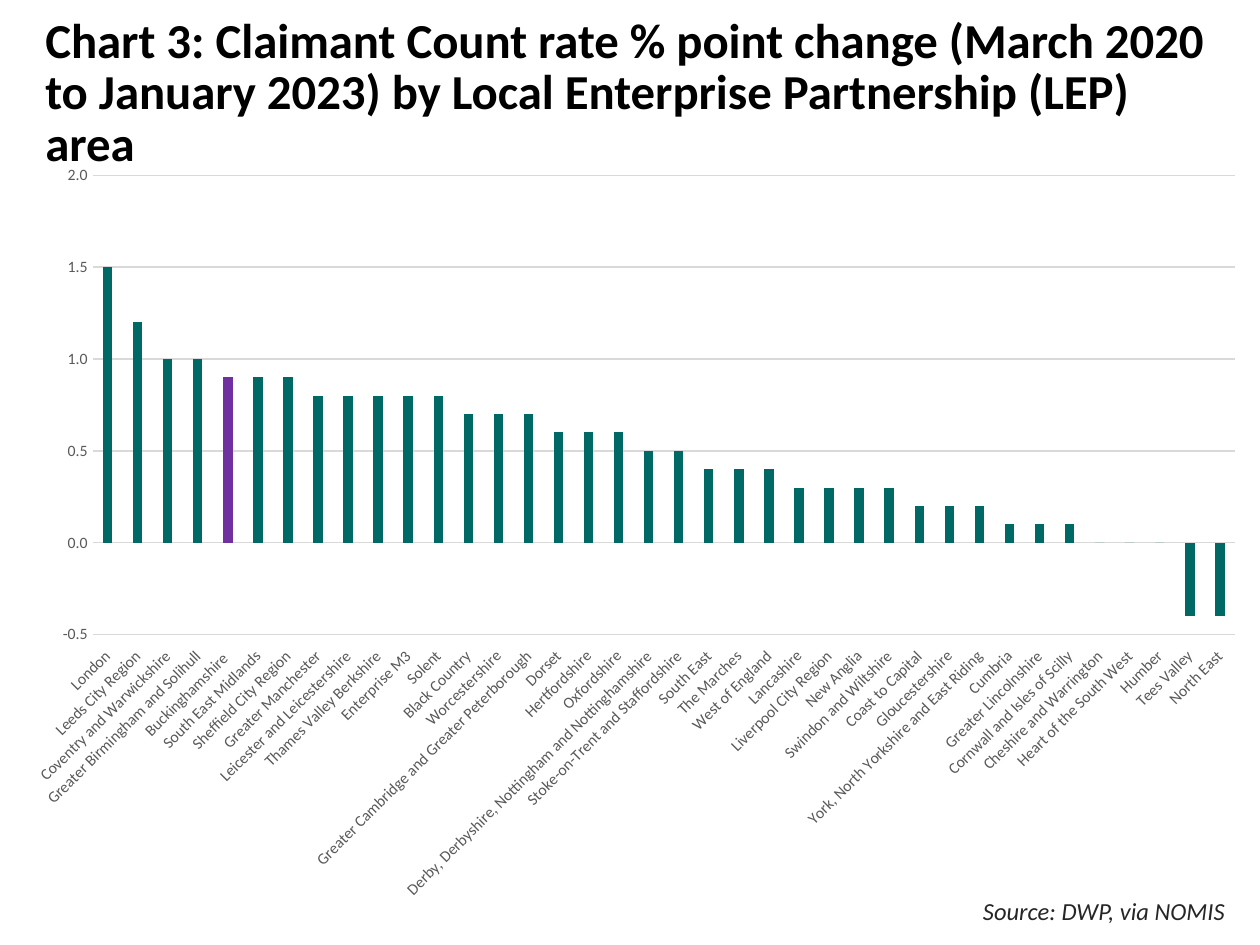
import pptx
import pptx.chart.data
import pptx.dml.color
import pptx.enum.chart
import pptx.enum.text
import pptx.oxml
import pptx.oxml.ns
import pptx.util

Pt = pptx.util.Pt

# Claimant count change in percentage points -> areas, in descending order
AREAS_BY_CHANGE = {
    1.5: ["London"],
    1.2: ["Leeds City Region"],
    1.0: ["Coventry and Warwickshire", "Greater Birmingham and Solihull"],
    0.9: ["Buckinghamshire ", "South East Midlands", "Sheffield City Region"],
    0.8: ["Greater Manchester", "Leicester and Leicestershire",
          "Thames Valley Berkshire", "Enterprise M3", "Solent"],
    0.7: ["Black Country", "Worcestershire",
          "Greater Cambridge and Greater Peterborough"],
    0.6: ["Dorset", "Hertfordshire", "Oxfordshire"],
    0.5: ["Derby, Derbyshire, Nottingham and Nottinghamshire",
          "Stoke-on-Trent and Staffordshire"],
    0.4: ["South East", "The Marches", "West of England"],
    0.3: ["Lancashire", "Liverpool City Region", "New Anglia",
          "Swindon and Wiltshire"],
    0.2: ["Coast to Capital", "Gloucestershire",
          "York, North Yorkshire and East Riding"],
    0.1: ["Cumbria", "Greater Lincolnshire", "Cornwall and Isles of Scilly"],
    0.0: ["Cheshire and Warrington", "Heart of the South West", "Humber"],
    -0.4: ["Tees Valley", "North East"],
}
HIGHLIGHT = "Buckinghamshire "


def rgb(value):
    return pptx.dml.color.RGBColor.from_string(value)


def set_font(font, size, color, bold=False, italic=False):
    font.name = "Calibri"
    font.size = Pt(size)
    font.color.rgb = rgb(color)
    font.bold = bold
    font.italic = italic


def write_text(tf, text, align="LEFT", anchor="TOP", spacing=1.0, **font):
    tf.word_wrap = True
    tf.auto_size = pptx.enum.text.MSO_AUTO_SIZE.NONE
    tf.vertical_anchor = getattr(pptx.enum.text.MSO_ANCHOR, anchor)
    p = tf.paragraphs[0]
    p.alignment = getattr(pptx.enum.text.PP_ALIGN, align)
    p.line_spacing = spacing
    r = p.add_run()
    r.text = text
    set_font(r.font, **font)


def set_plot_layout(chart, **fractions):
    """Fix the inner plot area as fractions (x, y, w, h) of the chart."""
    plot_area = chart.element.find(".//" + pptx.oxml.ns.qn("c:plotArea"))
    old = plot_area.find(pptx.oxml.ns.qn("c:layout"))
    if old is not None:
        plot_area.remove(old)
    sizes = "".join(f'<c:{k} val="{v}"/>' for k, v in fractions.items())
    plot_area.insert(0, pptx.oxml.parse_xml(
        f'<c:layout {pptx.oxml.ns.nsdecls("c")}><c:manualLayout>'
        '<c:layoutTarget val="inner"/><c:xMode val="edge"/>'
        f'<c:yMode val="edge"/>{sizes}</c:manualLayout></c:layout>'))


class SlideBuilder:
    black, dark, grey, rule = "000000", "262626", "595959", "D9D9D9"
    bar, accent = "006965", "7030A0"

    def __init__(self, prs):
        self.s = prs.slides.add_slide(prs.slide_layouts[5])

    def title(self, text, x, y, w, h):
        sp = self.s.shapes.title
        sp.left, sp.top, sp.width, sp.height = map(Pt, (x, y, w, h))
        write_text(sp.text_frame, text, anchor="MIDDLE", spacing=0.88,
                   size=27.9, color=self.black, bold=True)

    def source_note(self, text, x, y, w, h):
        sp = self.s.shapes.add_textbox(*map(Pt, (x, y, w, h)))
        write_text(sp.text_frame, text, align="RIGHT", size=14,
                   color=self.dark, italic=True)

    def style_axis(self, axis):
        axis.major_tick_mark = pptx.enum.chart.XL_TICK_MARK.NONE
        axis.minor_tick_mark = pptx.enum.chart.XL_TICK_MARK.NONE
        set_font(axis.tick_labels.font, 9, self.grey)

    def style_rule(self, line):
        line.color.rgb = rgb(self.rule)
        line.width = Pt(0.75)

    def column_chart(self, areas_by_change, highlight, x, y, w, h):
        bars = [(area, change) for change, areas in areas_by_change.items()
                for area in areas]
        areas, changes = zip(*bars)
        data = pptx.chart.data.CategoryChartData(number_format="0.0")
        data.categories = areas
        data.add_series("Series 1", changes)
        chart = self.s.shapes.add_chart(
            pptx.enum.chart.XL_CHART_TYPE.COLUMN_CLUSTERED,
            *map(Pt, (x, y, w, h)), data).chart
        chart.has_legend = chart.has_title = False
        set_font(chart.font, 10, self.black)
        set_plot_layout(chart, x=0.065, y=0.033, w=0.915, h=0.601)

        plot = chart.plots[0]
        plot.gap_width, plot.overlap = 219, -27
        plot.vary_by_categories = False
        series = plot.series[0]
        series.invert_if_negative = False
        point = series.points[areas.index(highlight)]
        for part, color in ((series, self.bar), (point, self.accent)):
            part.format.fill.solid()
            part.format.fill.fore_color.rgb = rgb(color)

        cat, val = chart.category_axis, chart.value_axis
        self.style_axis(cat)
        self.style_axis(val)
        cat.tick_label_position = pptx.enum.chart.XL_TICK_LABEL_POSITION.LOW
        cat.tick_labels.font  # ensures the text properties exist
        body = cat._element.find(".//" + pptx.oxml.ns.qn("a:bodyPr"))
        body.set("rot", "-2700000")
        self.style_rule(cat.format.line)
        val.minimum_scale, val.maximum_scale, val.major_unit = -0.5, 2, 0.5
        val.tick_labels.number_format = "#,##0.0"
        val.tick_labels.number_format_is_linked = False
        val.format.line.fill.background()
        self.style_rule(val.major_gridlines.format.line)


def main():
    prs = pptx.Presentation()
    prs.slide_width, prs.slide_height = Pt(720), Pt(540)
    slide = SlideBuilder(prs)
    slide.title("Chart 3: Claimant Count rate % point change (March 2020 to "
                "January 2023) by Local Enterprise Partnership (LEP) area",
                18.7, 9, 682.6, 90)
    slide.source_note("Source: DWP, via NOMIS", 535.7, 508.3, 171.4, 24.5)
    slide.column_chart(AREAS_BY_CHANGE, HIGHLIGHT, 6.5, 85.7, 713.5, 437)
    prs.save("out.pptx")


if __name__ == "__main__":
    main()
